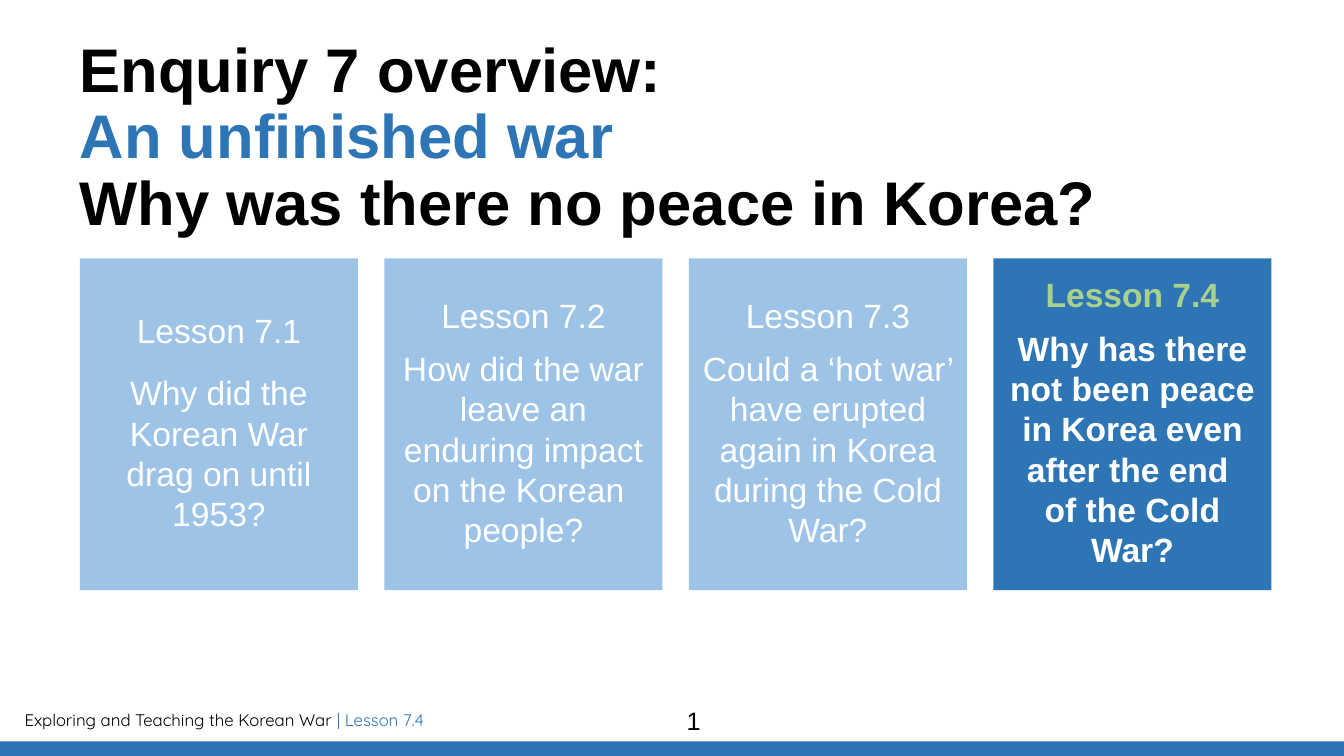
import pptx
import pptx.util
import pptx.dml.color
import pptx.enum.shapes
import pptx.enum.text

PP_ALIGN = pptx.enum.text.PP_ALIGN
ANCHOR = pptx.enum.text.MSO_ANCHOR
BLUE, PALE, GREEN, BLACK, WHITE = "2E75B6", "9DC3E6", "A9D18E", "000000", "FFFFFF"


def px(n):
    return pptx.util.Emu(n * 9525)


def rgb(code):
    return pptx.dml.color.RGBColor.from_string(code)


class Deck:
    font = "Arial"

    def __init__(self, width, height):
        self.prs = pptx.Presentation()
        self.prs.slide_width, self.prs.slide_height = px(width), px(height)
        self.s = self.prs.slides.add_slide(self.prs.slide_layouts[6])

    def frame(self, sp, inset=None, anchor=ANCHOR.TOP):
        tf = sp.text_frame
        tf.word_wrap = True
        tf.vertical_anchor = anchor
        if inset is not None:
            tf.margin_left = tf.margin_right = px(inset)
            tf.margin_top = tf.margin_bottom = px(inset)
        return tf

    def box(self, x, y, w, h, inset=None):
        sp = self.s.shapes.add_textbox(px(x), px(y), px(w), px(h))
        return self.frame(sp, inset)

    def rect(self, x, y, w, h, fill, inset=None):
        kind = pptx.enum.shapes.MSO_SHAPE.RECTANGLE
        sp = self.s.shapes.add_shape(kind, px(x), px(y), px(w), px(h))
        sp.shadow.inherit = False
        sp.fill.solid()
        sp.fill.fore_color.rgb = rgb(fill)
        sp.line.fill.background()
        return self.frame(sp, inset, ANCHOR.MIDDLE)

    def para(self, p, align=PP_ALIGN.LEFT, leading=None, before=0, after=0):
        p.alignment = align
        if leading:
            p.line_spacing = leading
        if before:
            p.space_before = pptx.util.Pt(before)
        if after:
            p.space_after = pptx.util.Pt(after)
        return p

    def run(self, p, text, size, color, bold=False, font=None):
        for i, line in enumerate(text.split("\n")):
            if i:
                p.add_line_break()
            if line:
                r = p.add_run()
                r.text = line
                r.font.name = font or self.font
                r.font.size = pptx.util.Pt(size)
                r.font.bold = bold
                r.font.color.rgb = rgb(color)


def main():
    deck = Deck(1280, 720)

    p = deck.para(deck.box(14, 671, 751, 29).paragraphs[0])
    deck.run(p, "Exploring and Teaching the Korean War ", 12, BLACK, font="Quicksand")
    deck.run(p, "| Lesson 7.4", 12, BLUE, font="Quicksand")
    deck.rect(0, 706, 1280, 14, BLUE)

    p = deck.para(deck.box(417, 667, 487, 38).paragraphs[0], PP_ALIGN.CENTER)
    deck.run(p, "1", 18, BLACK)

    p = deck.para(deck.box(76, 37, 1188, 139, 0).paragraphs[0], leading=0.9)
    for text, color in (
        ("Enquiry 7 overview: \n", BLACK),
        ("An unfinished war\n", BLUE),
        ("Why was there no peace in Korea?", BLACK),
    ):
        deck.run(p, text, 44, color, True)

    lessons = [
        ("Lesson 7.1", "Why did the Korean War drag on until 1953?", 6),
        ("Lesson 7.2", "How did the war leave an enduring impact on the Korean \npeople?", 0),
        ("Lesson 7.3", "Could a ‘hot war’ have erupted again in Korea during the Cold War?", 0),
        ("Lesson 7.4", "Why has there not been peace in Korea even after the end \nof the Cold War?", 0),
    ]
    for i, (lesson, question, gap) in enumerate(lessons):
        current = lesson == "Lesson 7.4"
        tf = deck.rect(76 + 290 * i, 246, 265, 316, BLUE if current else PALE, 13)
        p = deck.para(tf.paragraphs[0], PP_ALIGN.CENTER, 0.9, after=9)
        deck.run(p, lesson, 24, GREEN if current else WHITE, current)
        p = deck.para(tf.add_paragraph(), PP_ALIGN.CENTER, before=gap, after=gap)
        deck.run(p, question, 24, WHITE, current)

    deck.prs.save("out.pptx")


if __name__ == "__main__":
    main()
